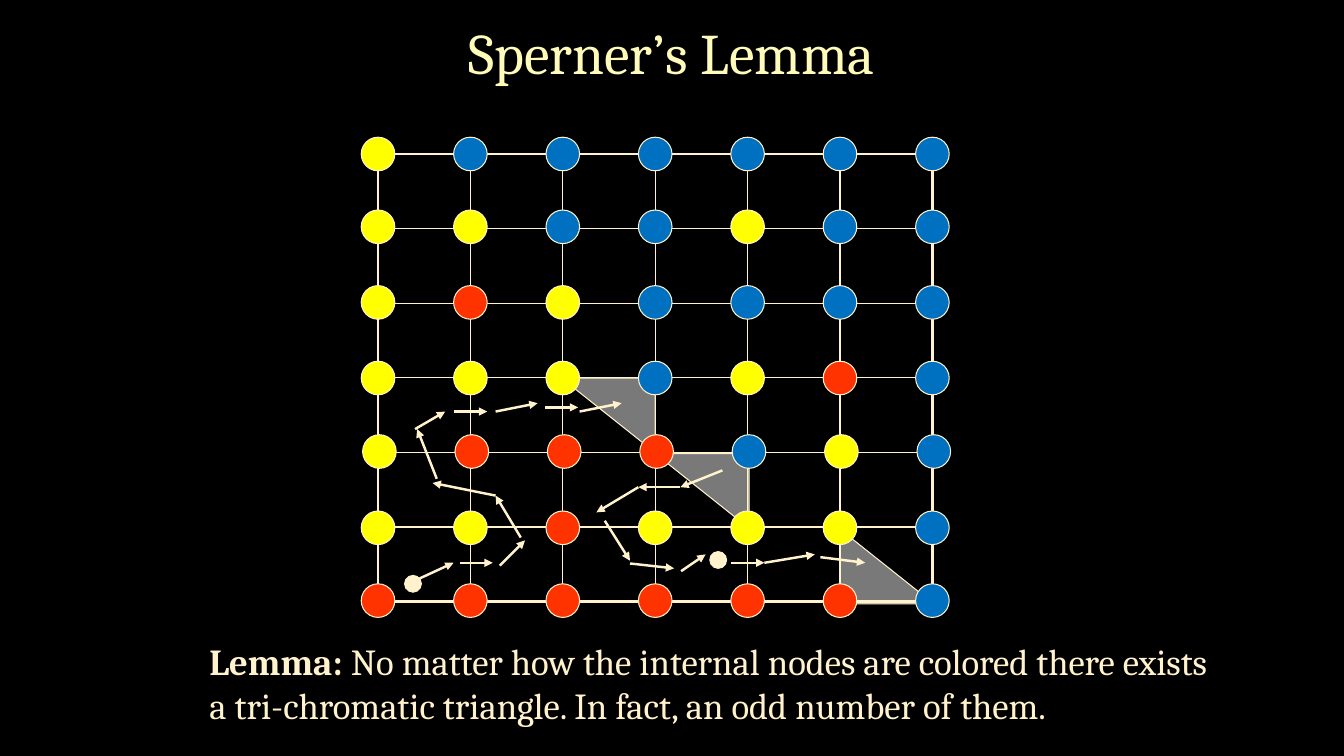
"""Build the Sperner's Lemma slide: a coloured grid with paths to tri-chromatic triangles."""
from lxml.etree import SubElement
from pptx import Presentation
from pptx.dml.color import RGBColor
from pptx.enum.shapes import MSO_CONNECTOR as Connector, MSO_SHAPE as Shape
from pptx.enum.text import MSO_ANCHOR as Anchor, PP_ALIGN as Align
from pptx.oxml import parse_xml
from pptx.oxml.ns import nsdecls, qn
from pptx.util import Pt

BLACK = RGBColor(0x00, 0x00, 0x00)
CREAM = RGBColor(0xFF, 0xF2, 0xCC)
TITLE_YELLOW = RGBColor(0xFF, 0xFC, 0xB9)
GRAY = RGBColor(0xE7, 0xE6, 0xE6)
NODE_COLORS = {
    "Y": RGBColor(0xFF, 0xFF, 0x00),
    "B": RGBColor(0x00, 0x70, 0xC0),
    "R": RGBColor(0xFF, 0x33, 0x00),
}
FONT = "Cambria"

TITLE = "Sperner’s Lemma"
LEMMA_LABEL = "Lemma:"
LEMMA_TEXT = (" No matter how the internal nodes are colored there exists"
              " a tri-chromatic triangle. In fact, an odd number of them.")

NODE_ROWS = [
    (258, 98, "YBBBBBB"),
    (258, 150, "YYBBYBB"),
    (258, 204, "YRYBBBB"),
    (258, 258, "YYYBYRB"),
    (259, 310.5, "YRRRBYB"),
    (258, 365, "YYRYYYB"),
    (258, 417, "RRRRRRB"),
]
TRIANGLES = [(468, 324, 180), (600, 378, 0), (401, 270, 180)]
PATH_STARTS = [(289, 411), (507, 394)]
ARROWS = [
    (486, 348, 456, 348), (456, 348, 426, 366), (432, 372, 450, 400.5),
    (450, 402.5, 481.5, 406), (486.5, 408, 504, 396), (516, 336, 486, 348),
    (522, 402, 546, 402), (546, 402, 582, 396), (586, 398, 618, 402),
    (298, 414, 324, 402), (328.5, 402, 352, 402), (357, 404, 375, 386),
    (372, 384, 354, 354), (354, 354, 309, 345), (312, 342, 298, 306.5),
    (296.5, 306.5, 318, 294), (324, 294, 348, 294), (354, 294, 384, 288),
    (389, 291, 413, 291), (414, 294, 444, 288),
]
GRID_LEFT, GRID_TOP, GRID_SIZE = 270, 110, 6
CELL_WIDTH, CELL_HEIGHT = 66, 53.3
NODE_SIZE, START_SIZE = 24, 12


def add_shape(shapes, kind, left, top, width, height, color, rotation=0):
    shape = shapes.add_shape(kind, Pt(left), Pt(top), Pt(width), Pt(height))
    shape.shadow.inherit = False
    shape.rotation = rotation
    shape.fill.solid()
    shape.fill.fore_color.rgb = color
    shape.line.color.rgb = CREAM
    shape.line.width = Pt(0.75)
    return shape


def add_triangle(slide, left, top, rotation):
    triangle = add_shape(slide.shapes, Shape.RIGHT_TRIANGLE, left, top,
                         CELL_WIDTH + 1, CELL_HEIGHT, GRAY, rotation)
    color = triangle.fill._xPr.find(qn("a:solidFill"))[0]
    SubElement(color, qn("a:alpha"), val="53000")


def set_borders(cell, row, column):
    last = GRID_SIZE - 1
    outer_sides = {"L": column == 0, "R": column == last, "T": row == 0, "B": row == last}
    properties = cell._tc.get_or_add_tcPr()
    for index, (side, outer) in enumerate(outer_sides.items()):
        width = Pt(2.25 if outer else 1)
        properties.insert(index, parse_xml(
            f'<a:ln{side} {nsdecls("a")} w="{width}"><a:solidFill>'
            f'<a:srgbClr val="{CREAM}"/></a:solidFill></a:ln{side}>'))


def add_grid(slide):
    table = slide.shapes.add_table(
        GRID_SIZE, GRID_SIZE, Pt(GRID_LEFT), Pt(GRID_TOP),
        Pt(GRID_SIZE * CELL_WIDTH), Pt(GRID_SIZE * CELL_HEIGHT)).table
    table.first_row = table.horz_banding = False
    for row in range(GRID_SIZE):
        table.rows[row].height = Pt(CELL_HEIGHT)
        table.columns[row].width = Pt(CELL_WIDTH)
        for column in range(GRID_SIZE):
            cell = table.cell(row, column)
            cell.fill.background()
            set_borders(cell, row, column)


def add_arrow(slide, *ends):
    arrow = slide.shapes.add_connector(Connector.STRAIGHT, *map(Pt, ends))
    arrow.line.color.rgb = CREAM
    arrow.line.width = Pt(1.75)
    SubElement(arrow.line._get_or_add_ln(), qn("a:tailEnd"), type="triangle")
    SubElement(arrow._element.spPr, qn("a:effectLst"))


def add_text(slide, left, top, width, height, runs, size, color):
    frame = slide.shapes.add_textbox(Pt(left), Pt(top), Pt(width), Pt(height)).text_frame
    frame.word_wrap = True
    paragraph = frame.paragraphs[0]
    paragraph.font.name = FONT
    paragraph.font.size = Pt(size)
    paragraph.font.color.rgb = color
    for text, bold in runs:
        run = paragraph.add_run()
        run.text = text
        run.font.bold = bold
    return frame


def main():
    presentation = Presentation()
    presentation.slide_width, presentation.slide_height = Pt(960), Pt(540)
    slide = presentation.slides.add_slide(presentation.slide_layouts[6])
    slide.background.fill.solid()
    slide.background.fill.fore_color.rgb = BLACK

    for triangle in TRIANGLES:
        add_triangle(slide, *triangle)
    add_grid(slide)
    nodes = slide.shapes.add_group_shape().shapes
    for left, top, colors in NODE_ROWS:
        for column, color in enumerate(colors):
            add_shape(nodes, Shape.OVAL, left + column * CELL_WIDTH, top,
                      NODE_SIZE, NODE_SIZE, NODE_COLORS[color])
    for left, top in PATH_STARTS:
        add_shape(slide.shapes, Shape.OVAL, left, top, START_SIZE, START_SIZE, CREAM)
    for arrow in ARROWS:
        add_arrow(slide, *arrow)

    add_text(slide, 142.5, 453, 738, 70.5,
             [(LEMMA_LABEL, True), (LEMMA_TEXT, False)], 26.2, CREAM)
    title = add_text(slide, 66, -12, 828, 104.5, [(TITLE, False)], 41, TITLE_YELLOW)
    title.vertical_anchor = Anchor.MIDDLE
    title.paragraphs[0].alignment = Align.CENTER
    title.paragraphs[0].line_spacing = 0.9
    presentation.save("out.pptx")


if __name__ == "__main__":
    main()
